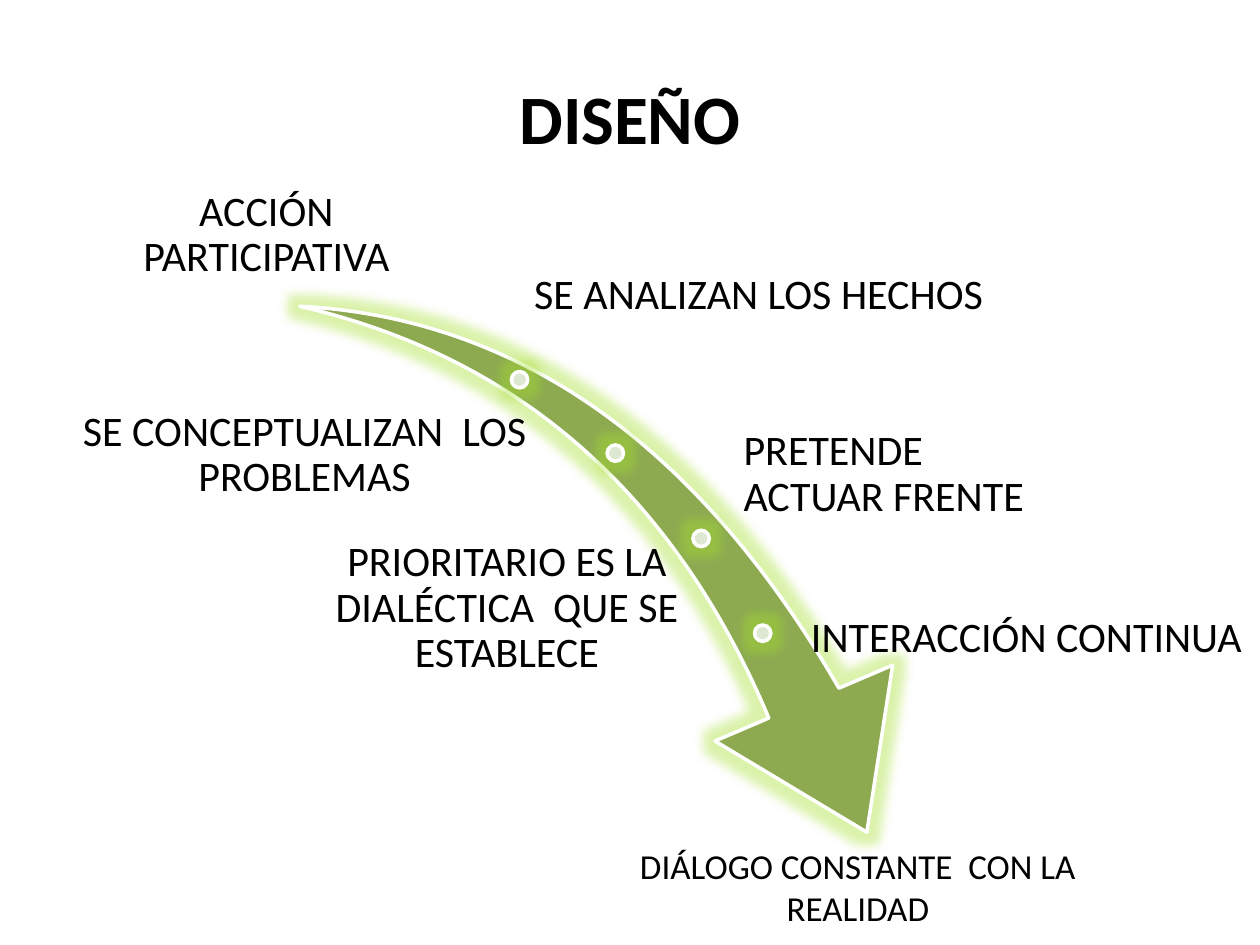
from dataclasses import dataclass

from lxml.etree import SubElement
from pptx import Presentation
from pptx.dml.color import RGBColor
from pptx.enum.shapes import MSO_SHAPE as Preset
from pptx.enum.text import MSO_ANCHOR as Anchor, PP_ALIGN as Align
from pptx.oxml.ns import qn
from pptx.util import Cm, Pt


@dataclass(frozen=True)
class Theme:
    font: str = "Calibri"
    text: str = "000000"
    arrow: str = "8DAA51"
    dot: str = "DEE7D1"
    outline: str = "FFFFFF"
    glow: str = "A5E02F"
    title_size: float = 39.6
    label_size: float = 24
    closing_size: float = 20


theme = Theme()


def write_text(shape, text, size=theme.label_size, bold=False, align=Align.CENTER,
               anchor=Anchor.MIDDLE, inset=0.08, spacing=0.9):
    frame = shape.text_frame
    frame.word_wrap = True
    frame.vertical_anchor = anchor
    if inset is not None:
        frame.margin_left = frame.margin_right = Cm(inset)
        frame.margin_top = frame.margin_bottom = Cm(inset)
    paragraph = frame.paragraphs[0]
    paragraph.alignment = align
    paragraph.line_spacing = spacing
    run = paragraph.add_run()
    run.text = text
    run.font.name = theme.font
    run.font.size = Pt(size)
    run.font.bold = bold
    run.font.color.rgb = RGBColor.from_string(theme.text)


def add_glowing_shape(preset, box, fill):
    shape = slide.shapes.add_shape(preset, *map(Cm, box))
    shape.shadow.inherit = False
    shape.fill.solid()
    shape.fill.fore_color.rgb = RGBColor.from_string(fill)
    shape.line.color.rgb = RGBColor.from_string(theme.outline)
    shape.line.width = Pt(2)
    # Soft green halo
    effects = shape._element.spPr.find(qn("a:effectLst"))
    glow = SubElement(effects, qn("a:glow"), rad=str(Pt(11)))
    color = SubElement(glow, qn("a:srgbClr"), val=theme.glow)
    SubElement(color, qn("a:alpha"), val="40000")
    return shape


presentation = Presentation()
presentation.slide_width, presentation.slide_height = Cm(25.4), Cm(19.05)
slide = presentation.slides.add_slide(presentation.slide_layouts[5])

# Title
title = slide.shapes.title
title.left, title.top, title.width, title.height = Cm(1.27), Cm(0.76), Cm(22.86), Cm(3.18)
write_text(title, "DISEÑO", size=theme.title_size, bold=True, inset=None, spacing=1.0)

# Curved arrow
arrow = add_glowing_shape(Preset.SWOOSH_ARROW, (5.74, 6.58, 13.44, 9.37), theme.arrow)
arrow.adjustments[0] = 0.163
arrow.adjustments[1] = 0.314
arrow.rotation = 73.3

# Dots along the arrow
for left, top in [(10.31, 7.49), (12.24, 8.97), (13.97, 10.69), (15.21, 12.6)]:
    add_glowing_shape(Preset.OVAL, (left, top, 0.33, 0.33), theme.dot)

# Labels around the arrow
labels = [
    ("ACCIÓN PARTICIPATIVA", (1.37, 3.73, 8, 2.01), {"anchor": Anchor.BOTTOM}),
    ("SE ANALIZAN LOS HECHOS", (10.69, 4.72, 9.42, 2.49), {"align": Align.LEFT}),
    ("SE CONCEPTUALIZAN  LOS PROBLEMAS", (1.57, 8.03, 9.14, 2.31), {}),
    ("PRETENDE ACTUAR FRENTE", (14.91, 8.33, 6.32, 2.49), {"align": Align.LEFT}),
    ("INTERACCIÓN CONTINUA", (15.98, 11.63, 9.42, 2.49), {}),
    ("PRIORITARIO ES LA DIALÉCTICA  QUE SE ESTABLECE", (5.94, 10.82, 8.56, 2.8),
     {"anchor": Anchor.TOP}),
    ("DIÁLOGO CONSTANTE  CON LA REALIDAD", (11.3, 16.89, 11.99, 1.96),
     {"size": theme.closing_size, "anchor": Anchor.TOP, "inset": None, "spacing": 1.0}),
]
for text, box, style in labels:
    write_text(slide.shapes.add_textbox(*map(Cm, box)), text, **style)

presentation.save("out.pptx")
